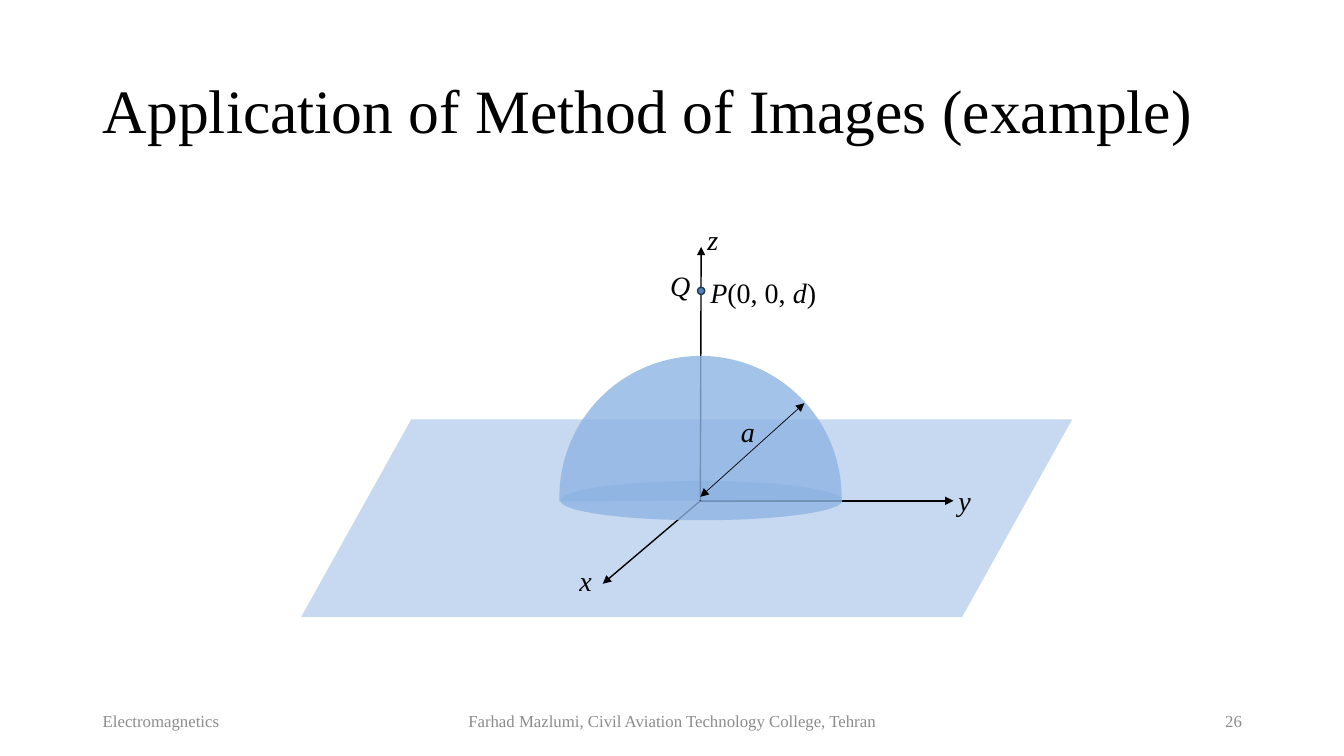
from lxml.etree import SubElement
from pptx import Presentation
from pptx.dml.color import RGBColor
from pptx.enum.shapes import MSO_CONNECTOR, MSO_SHAPE
from pptx.enum.text import MSO_ANCHOR, PP_ALIGN
from pptx.oxml.ns import qn
from pptx.util import Cm, Pt

COLORS = {"ink": "000000", "footer": "8C8C8C", "plane": "C6D9F1",
          "dome": "8EB4E3", "charge": "4F81BD", "charge_line": "233953"}
COLORS = {name: RGBColor.from_string(value) for name, value in COLORS.items()}
FONT = "Times New Roman"
ORIGIN = (17.65, 12.62)

presentation = Presentation()
presentation.slide_width, presentation.slide_height = Cm(33.87), Cm(19.05)
slide = presentation.slides.add_slide(presentation.slide_layouts[5])


def add_solid(kind, box, color, opacity=100):
    """Add a borderless filled shape; box is left, top, width, height in cm."""
    shape = slide.shapes.add_shape(kind, *map(Cm, box))
    shape.shadow.inherit = False
    shape.fill.solid()
    shape.fill.fore_color.rgb = COLORS[color]
    shape.line.fill.background()
    if opacity < 100:
        fill_color = shape._element.spPr.find(qn("a:solidFill")).find(qn("a:srgbClr"))
        SubElement(fill_color, qn("a:alpha"), val=str(opacity * 1000))
    return shape


def add_arrow(start, end, width=1, ends=("a:tailEnd",)):
    connector = slide.shapes.add_connector(
        MSO_CONNECTOR.STRAIGHT, *map(Cm, (*start, *end)))
    connector.line.width = Pt(width)
    connector.line.color.rgb = COLORS["ink"]
    for tag in ends:
        SubElement(connector.line._get_or_add_ln(), qn(tag), type="triangle")
    SubElement(connector._element.spPr, qn("a:effectLst"))


# Title
title = slide.shapes.title
title.left, title.top, title.width, title.height = map(Cm, (2.34, 1.02, 29.21, 3.68))
title.text_frame.text = "Application of Method of Images (example)"
title.text_frame.vertical_anchor = MSO_ANCHOR.MIDDLE
paragraph = title.text_frame.paragraphs[0]
paragraph.alignment = PP_ALIGN.LEFT
paragraph.line_spacing = 0.9
paragraph.font.name, paragraph.font.size = FONT, Pt(44)
paragraph.font.color.rgb = COLORS["ink"]

# Conducting plane, axes, dome and charge
plane = add_solid(MSO_SHAPE.PARALLELOGRAM, (7.59, 10.57, 19.43, 4.98), "plane")
plane.adjustments[0] = 0.557
add_arrow(ORIGIN, (24.03, 12.62))
add_arrow(ORIGIN, (15.19, 14.71))
add_solid(MSO_SHAPE.OVAL, (14.12, 12.12, 7.11, 0.99), "dome", 80)
add_arrow(ORIGIN, (17.67, 6.22))
charge = add_solid(MSO_SHAPE.OVAL, (17.58, 7.24, 0.18, 0.18), "charge")
charge.line.color.rgb = COLORS["charge_line"]
charge.line.width = Pt(1)
dome = add_solid(MSO_SHAPE.CHORD, (14.1, 8.97, 7.11, 7.11), "dome", 80)
dome.adjustments[0], dome.adjustments[1] = 106.94, 0.63
add_arrow((17.65, 12.52), (20.27, 10.16), 0.5, ("a:headEnd", "a:tailEnd"))

# Labels: runs alternate between italic and upright
labels = [
    (["Q"], 16.64, 6.65, 1.12),
    (["P", "(0, 0, ", "d", ")"], 17.65, 6.81, 3.38),
    (["z"], 17.58, 5.49, 1.12),
    (["y"], 23.9, 12.07, 1.12),
    (["x"], 14.35, 14.07, 1.12),
    (["a"], 18.42, 10.31, 1.12),
]
for runs, left, top, width in labels:
    label = slide.shapes.add_textbox(Cm(left), Cm(top), Cm(width), Cm(1.12))
    label.text_frame.word_wrap = True
    paragraph = label.text_frame.paragraphs[0]
    paragraph.font.name, paragraph.font.size = FONT, Pt(20)
    paragraph.font.color.rgb = COLORS["ink"]
    for index, text in enumerate(runs):
        run = paragraph.add_run()
        run.text = text
        run.font.italic = index % 2 == 0

# Footer
footers = [
    ("Electromagnetics", 2.34, 7.62, PP_ALIGN.LEFT),
    ("Farhad Mazlumi, Civil Aviation Technology College, Tehran",
     11.23, 11.43, PP_ALIGN.CENTER),
    ("26", 23.93, 7.62, PP_ALIGN.RIGHT),
]
for text, left, width, alignment in footers:
    footer = slide.shapes.add_textbox(Cm(left), Cm(17.65), Cm(width), Cm(1.02))
    footer.text_frame.word_wrap = True
    footer.text_frame.vertical_anchor = MSO_ANCHOR.MIDDLE
    paragraph = footer.text_frame.paragraphs[0]
    paragraph.text, paragraph.alignment = text, alignment
    paragraph.font.name, paragraph.font.size = FONT, Pt(12)
    paragraph.font.color.rgb = COLORS["footer"]

presentation.save("out.pptx")
